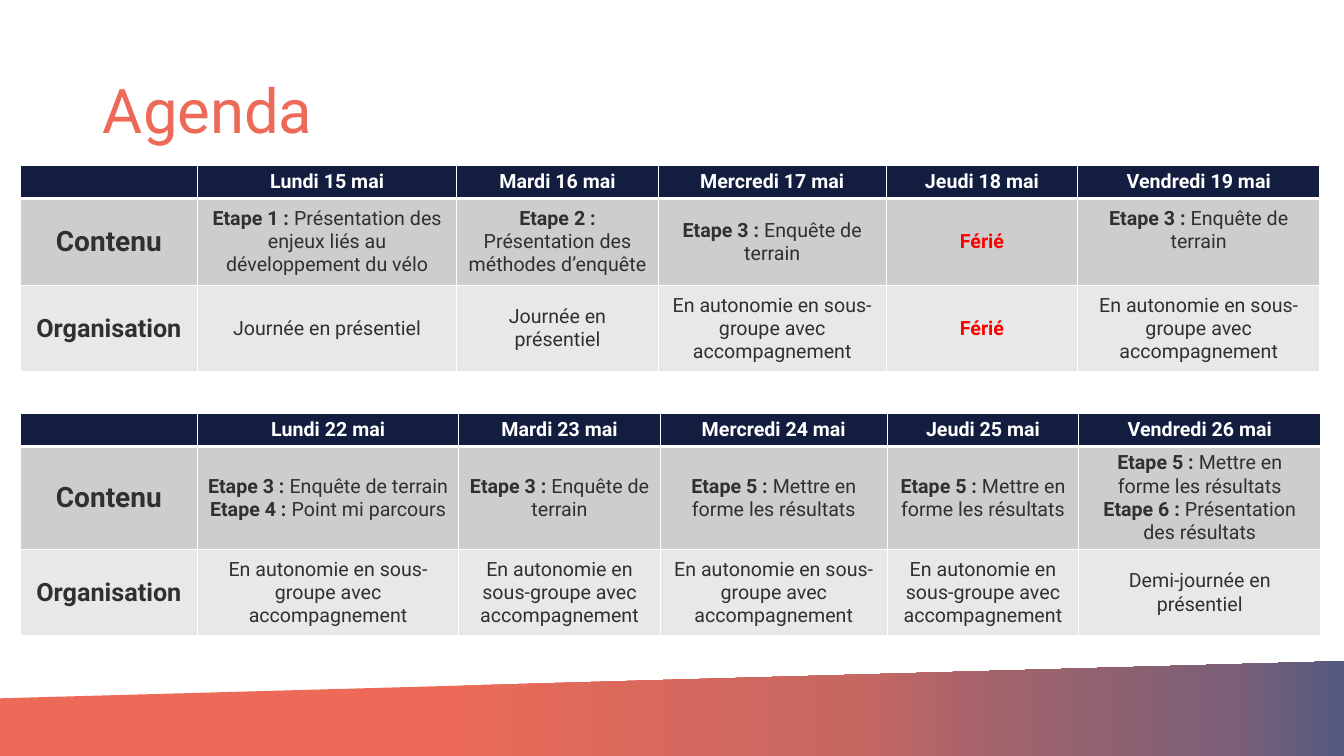
import pptx
import pptx.util
import pptx.dml.color
import pptx.enum.text
from lxml import etree
from pptx.oxml.ns import qn

Inches, Pt = pptx.util.Inches, pptx.util.Pt
RGB = pptx.dml.color.RGBColor
MIDDLE = pptx.enum.text.MSO_ANCHOR.MIDDLE
CENTER = pptx.enum.text.PP_ALIGN.CENTER

FONT = "Roboto"
COLORS = {
    "coral": "EC6A57", "navy": "131D40", "white": "FFFFFF", "text": "303033",
    "holiday": "FF0000", "content": "CCCDCF", "organisation": "E7E8E8",
}
GRADIENT = [(33, "EC6A57"), (64, "C66762"), (75, "A0636C"), (92, "7A5F77"), (100, "535B81")]
BAND = [(-0.05, 6.93), (13.33, 6.56), (13.33, 7.5), (-0.06, 7.5)]

AUTONOMY = "En autonomie en sous-groupe avec accompagnement"
ON_SITE = "Journée en présentiel"
HOLIDAY = "Férié"
SURVEY = "Etape 3 : Enquête de terrain"
RESULTS = "Etape 5 : Mettre en forme les résultats"

WEEKS = [
    {
        "top": 1.64,
        "cols": [1.76, 2.57, 2, 2.26, 1.9, 2.4],
        "rows": [0.33, 0.86, 0.86],
        "cells": [
            ["", "Lundi 15 mai", "Mardi 16 mai", "Mercredi 17 mai", "Jeudi 18 mai", "Vendredi 19 mai"],
            ["Contenu", "Etape 1 : Présentation des enjeux liés au développement du vélo",
             "Etape 2 : Présentation des méthodes d’enquête", SURVEY, HOLIDAY, SURVEY],
            ["Organisation", ON_SITE, ON_SITE, AUTONOMY, HOLIDAY, AUTONOMY],
        ],
    },
    {
        "top": 4.1,
        "cols": [1.76, 2.59, 2, 2.25, 1.9, 2.4],
        "rows": [0.33, 1.02, 0.86],
        "cells": [
            ["", "Lundi 22 mai", "Mardi 23 mai", "Mercredi 24 mai", "Jeudi 25 mai", "Vendredi 26 mai"],
            ["Contenu", SURVEY + "\nEtape 4 : Point mi parcours", SURVEY, RESULTS, RESULTS,
             RESULTS + "\nEtape 6 : Présentation des résultats"],
            ["Organisation"] + [AUTONOMY] * 4 + ["Demi-journée en présentiel"],
        ],
    },
]
ROW_FILLS = ["navy", "content", "organisation"]
LABEL_SIZES = [14, 20, 18]


def rgb(name):
    return RGB.from_string(COLORS[name])


def add_band(s):
    points = [(Inches(x), Inches(y)) for x, y in BAND]
    builder = s.shapes.build_freeform(*points[0])
    builder.add_line_segments(points[1:], close=True)
    sp = builder.convert_to_shape()
    sp.shadow.inherit = False
    sp.line.fill.background()
    sp.fill.gradient()
    sp.fill.gradient_angle = 0
    stops = next(sp._element.iter(qn("a:gsLst")))
    for stop in list(stops):
        stops.remove(stop)
    for pos, color in GRADIENT:
        stop = etree.SubElement(stops, qn("a:gs"), pos=str(pos * 1000))
        etree.SubElement(stop, qn("a:srgbClr"), val=color)


def set_borders(cell, bottom_width, top_width):
    tcPr = cell._tc.get_or_add_tcPr()
    widths = {"a:lnL": 1, "a:lnR": 1, "a:lnT": top_width, "a:lnB": bottom_width}
    for tag, width in widths.items():
        ln = etree.SubElement(tcPr, qn(tag), w=str(Pt(width)))
        fill = etree.SubElement(ln, qn("a:solidFill"))
        etree.SubElement(fill, qn("a:srgbClr"), val=COLORS["white"])


def fill_text(cell, text, size, color, bold):
    tf = cell.text_frame
    for i, line in enumerate(text.split("\n")):
        p = tf.add_paragraph() if i else tf.paragraphs[0]
        p.alignment = CENTER
        p.font.name = FONT
        p.font.size = Pt(size)
        p.font.color.rgb = rgb(color)
        step, sep, rest = line.partition(" : ")
        parts = [(step + sep, True), (rest, False)] if sep else [(line, bold)]
        for part, strong in parts:
            r = p.add_run()
            r.text = part
            r.font.bold = strong


def add_week(s, week):
    cols, rows = week["cols"], week["rows"]
    table = s.shapes.add_table(len(rows), len(cols), Inches(0.2), Inches(week["top"]),
                               Inches(sum(cols)), Inches(sum(rows))).table
    for column, width in zip(table.columns, cols):
        column.width = Inches(width)
    for i, (height, texts) in enumerate(zip(rows, week["cells"])):
        table.rows[i].height = Inches(height)
        for j, text in enumerate(texts):
            cell = table.cell(i, j)
            cell.vertical_anchor = MIDDLE
            set_borders(cell, 3 if i == 0 else 1, 3 if i == 1 else 1)
            cell.fill.solid()
            cell.fill.fore_color.rgb = rgb(ROW_FILLS[i])
            if not text:
                cell.margin_top = cell.margin_bottom = 0
                continue
            color = "white" if i == 0 else "holiday" if text == HOLIDAY else "text"
            bold = i == 0 or j == 0 or text == HOLIDAY
            fill_text(cell, text, LABEL_SIZES[i] if j == 0 else 14, color, bold)
    return table


def main():
    prs = pptx.Presentation()
    prs.slide_width, prs.slide_height = Inches(13.33), Inches(7.5)
    s = prs.slides.add_slide(prs.slide_layouts[5])
    add_band(s)

    title = s.shapes.title
    title.left, title.top = Inches(0.92), Inches(0.4)
    title.width, title.height = Inches(11.5), Inches(1.45)
    tf = title.text_frame
    tf.text = "Agenda"
    tf.vertical_anchor = MIDDLE
    tf.auto_size = pptx.enum.text.MSO_AUTO_SIZE.NONE
    p = tf.paragraphs[0]
    p.alignment = pptx.enum.text.PP_ALIGN.LEFT
    p.line_spacing = 0.9
    p.font.name = FONT
    p.font.size = Pt(44)
    p.font.color.rgb = rgb("coral")

    first_week, _ = [add_week(s, week) for week in WEEKS]
    first_week.cell(1, 5).margin_bottom = Inches(0.28)
    prs.save("out.pptx")


if __name__ == "__main__":
    main()
